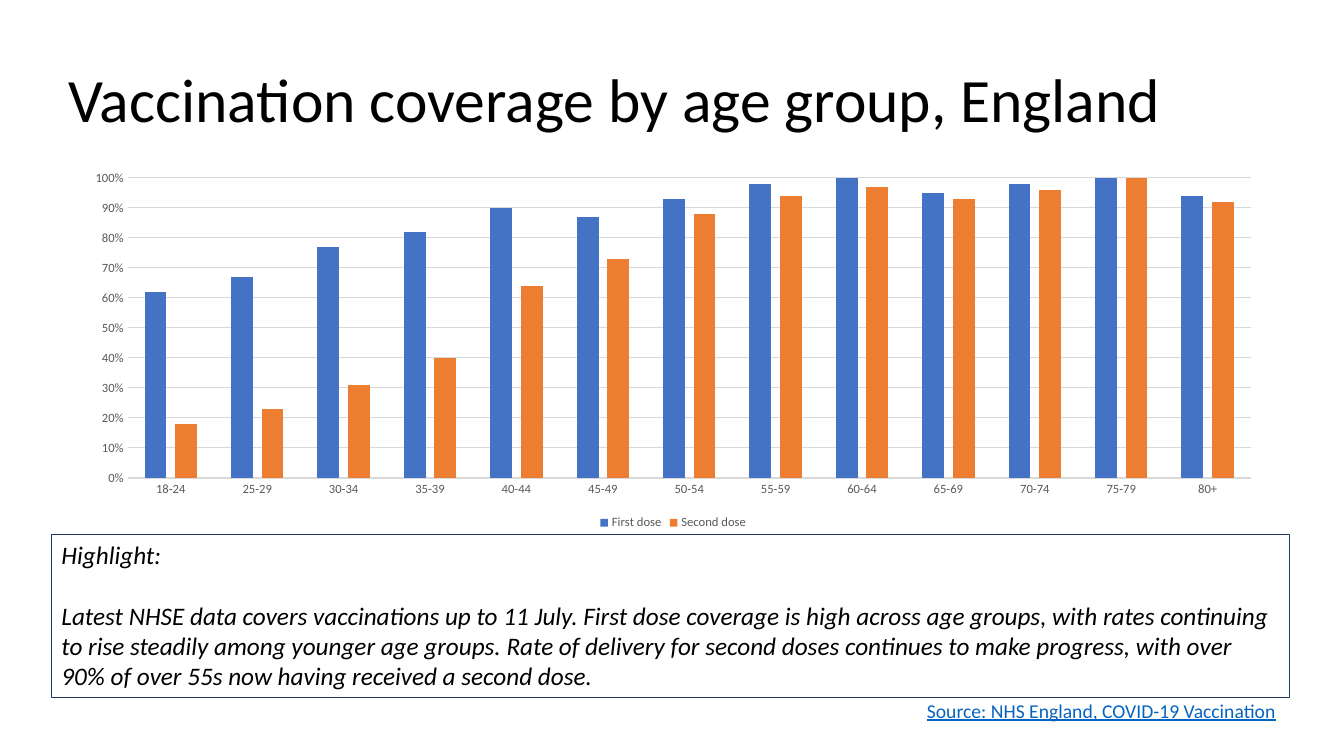
from pptx import Presentation
from pptx.chart.data import CategoryChartData
from pptx.dml.color import RGBColor
from pptx.enum.chart import XL_CHART_TYPE as ChartType
from pptx.enum.chart import XL_LEGEND_POSITION as LegendPosition
from pptx.enum.chart import XL_TICK_MARK as TickMark
from pptx.enum.shapes import MSO_SHAPE as ShapeKind
from pptx.enum.text import MSO_ANCHOR as Anchor
from pptx.enum.text import PP_ALIGN as Align
from pptx.util import Cm, Pt

FONT = "Calibri"
BLACK = RGBColor(0x00, 0x00, 0x00)
GREY = RGBColor(0x59, 0x59, 0x59)
GRID = RGBColor(0xD9, 0xD9, 0xD9)
NAVY = RGBColor(0x20, 0x38, 0x64)
LINK_BLUE = RGBColor(0x05, 0x63, 0xC1)
BLUE = RGBColor(0x44, 0x72, 0xC4)
ORANGE = RGBColor(0xED, 0x7D, 0x31)

AGE_GROUPS = [f"{low}-{high}" for low, high in
              [(18, 24)] + [(age, age + 4) for age in range(25, 80, 5)]] + ["80+"]
DOSES = [
    ("First dose", BLUE, [0.62, 0.67, 0.77, 0.82, 0.9, 0.87, 0.93,
                          0.98, 1, 0.95, 0.98, 1.02, 0.94]),
    ("Second dose", ORANGE, [0.18, 0.23, 0.31, 0.4, 0.64, 0.73, 0.88,
                             0.94, 0.97, 0.93, 0.96, 1.01, 0.92]),
]
HIGHLIGHT = (
    "Latest NHSE data covers vaccinations up to 11 July. First dose coverage is high "
    "across age groups, with rates continuing to rise steadily among younger age groups. "
    "Rate of delivery for second doses continues to make progress, with over 90% of "
    "over 55s now having received a second dose."
)


def format_font(font, size, color, italic=False, underline=False):
    font.name = FONT
    font.size = Pt(size)
    font.bold = False
    font.italic = italic
    font.underline = underline
    font.color.rgb = color


def write_text(paragraph, text, size=18, color=BLACK, align=Align.LEFT,
               line_spacing=None, space_before=0, **style):
    paragraph.alignment = align
    paragraph.line_spacing = line_spacing
    if space_before:
        paragraph.space_before = Pt(space_before)
    run = paragraph.add_run()
    run.text = text
    format_font(run.font, size, color, **style)


def add_title(slide, text):
    title = slide.shapes.title
    title.left, title.top, title.width, title.height = Cm(1.47), Cm(0.74), Cm(29.21), Cm(3.68)
    title.text_frame.vertical_anchor = Anchor.MIDDLE
    write_text(title.text_frame.paragraphs[0], text, size=44, line_spacing=0.9)


def format_axis(axis):
    axis.major_tick_mark = axis.minor_tick_mark = TickMark.NONE
    format_font(axis.tick_labels.font, 9, GREY)


def format_line(line, color):
    line.color.rgb = color
    line.width = Pt(0.75)


def add_coverage_chart(slide):
    data = CategoryChartData(number_format="0%")
    data.categories = AGE_GROUPS
    for name, _, values in DOSES:
        data.add_series(name, values)
    chart = slide.shapes.add_chart(ChartType.COLUMN_CLUSTERED, Cm(1.8), Cm(4.11),
                                   Cm(30.33), Cm(9.35), data).chart
    format_font(chart.font, 10, BLACK)
    chart.has_title = False

    # Columns
    plot = chart.plots[0]
    plot.vary_by_categories = False
    plot.gap_width = 156
    plot.overlap = -40
    for series, (_, color, _) in zip(plot.series, DOSES):
        series.format.fill.solid()
        series.format.fill.fore_color.rgb = color

    # Axes
    age_axis, share_axis = chart.category_axis, chart.value_axis
    format_axis(age_axis)
    format_line(age_axis.format.line, GRID)
    format_axis(share_axis)
    share_axis.minimum_scale, share_axis.maximum_scale = 0, 1
    share_axis.major_unit = 0.1
    share_axis.tick_labels.number_format = "0%"
    share_axis.tick_labels.number_format_is_linked = False
    share_axis.format.line.fill.background()
    share_axis.has_major_gridlines = True
    format_line(share_axis.major_gridlines.format.line, GRID)

    # Legend
    chart.has_legend = True
    chart.legend.position = LegendPosition.BOTTOM
    chart.legend.include_in_layout = False
    format_font(chart.legend.font, 9, GREY)


def add_highlight_box(slide, heading, text):
    box = slide.shapes.add_shape(ShapeKind.RECTANGLE, Cm(1.3), Cm(13.46), Cm(31.19), Cm(4.11))
    box.shadow.inherit = False
    box.fill.background()
    format_line(box.line, NAVY)
    frame = box.text_frame
    frame.word_wrap = True
    frame.vertical_anchor = Anchor.TOP
    write_text(frame.paragraphs[0], heading, italic=True)
    write_text(frame.add_paragraph(), text, italic=True, space_before=22)


def add_source(slide, text):
    box = slide.shapes.add_textbox(Cm(23.11), Cm(17.48), Cm(9.47), Cm(0.86))
    box.text_frame.word_wrap = False
    write_text(box.text_frame.paragraphs[0], text, size=14, color=LINK_BLUE, underline=True)


def main():
    presentation = Presentation()
    presentation.slide_width, presentation.slide_height = Cm(33.87), Cm(19.05)
    title_only = presentation.slide_layouts[5]
    slide = presentation.slides.add_slide(title_only)
    add_title(slide, "Vaccination coverage by age group, England")
    add_highlight_box(slide, "Highlight:", HIGHLIGHT)
    add_source(slide, "Source: NHS England, COVID-19 Vaccination")
    add_coverage_chart(slide)
    presentation.save("out.pptx")


if __name__ == "__main__":
    main()
